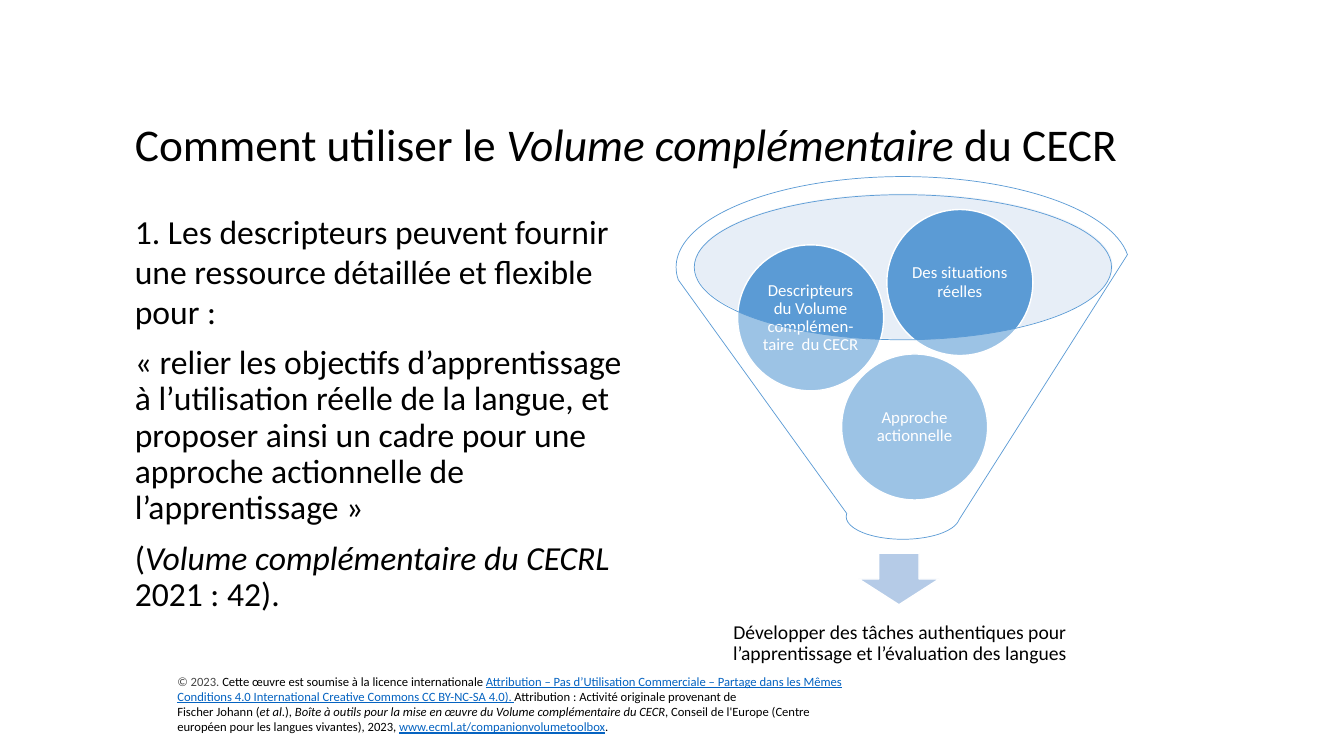
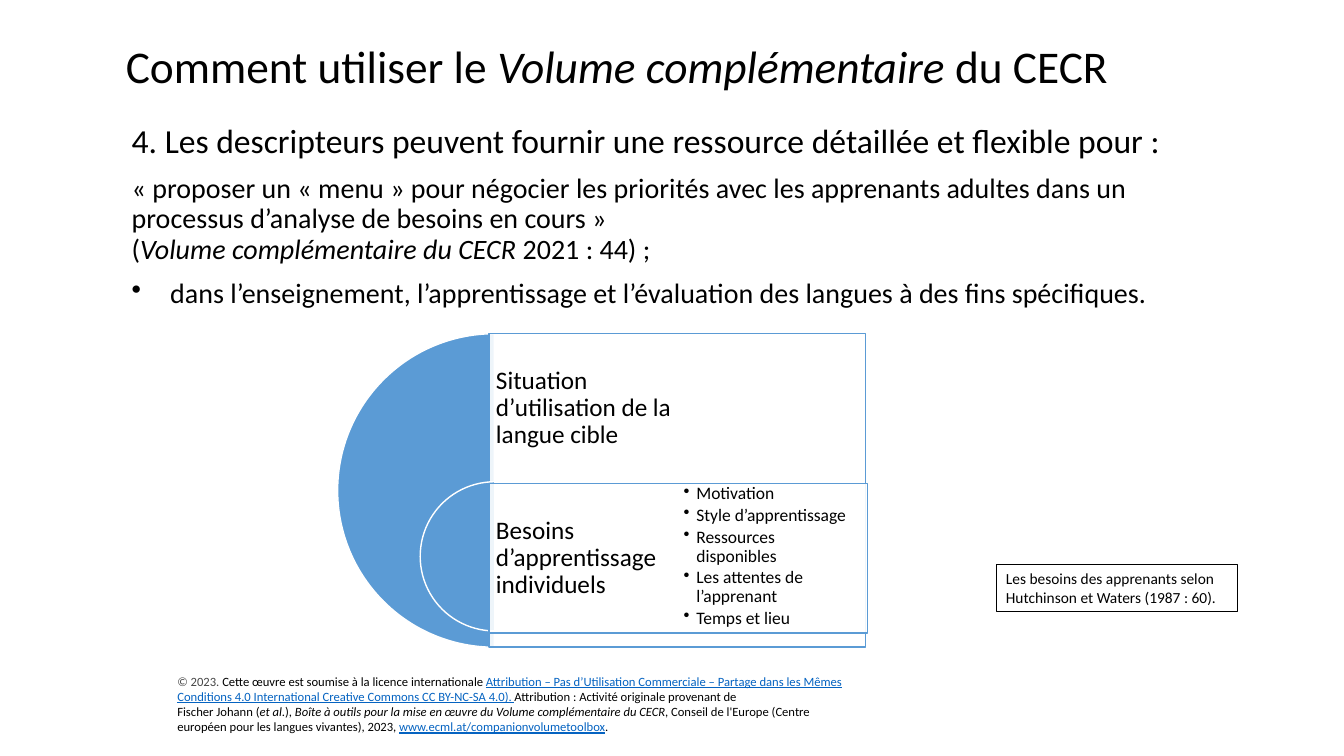
from lxml.etree import SubElement
from pptx import Presentation
from pptx.dml.color import RGBColor
from pptx.enum.shapes import MSO_SHAPE as Shape
from pptx.enum.text import MSO_ANCHOR as Anchor, MSO_AUTO_SIZE as AutoSize, PP_ALIGN as Align
from pptx.oxml.ns import qn
from pptx.util import Cm, Pt

BLACK = RGBColor(0x00, 0x00, 0x00)
WHITE = RGBColor(0xFF, 0xFF, 0xFF)
GREY = RGBColor(0x46, 0x46, 0x46)
BLUE = RGBColor(0x5B, 0x9B, 0xD5)
PALE_BLUE = RGBColor(0xC4, 0xD5, 0xEB)
ARROW_BLUE = RGBColor(0xB5, 0xCB, 0xE7)
LINK_BLUE = RGBColor(0x05, 0x63, 0xC1)

ITALIC = {"italic": True}
LINK = {"underline": True, "color": LINK_BLUE}
BREAK = "\n"

TITLE = ["Comment utiliser le ", ("Volume complémentaire ", ITALIC), "du CECR"]
LICENCE = [
    [
        ("© 2023. ", {"color": GREY}),
        "Cette œuvre est soumise à la licence internationale ",
        ("Attribution – Pas d’Utilisation Commerciale – Partage dans les Mêmes "
         "Conditions 4.0 International Creative Commons CC BY-NC-SA 4.0). ", LINK),
        "Attribution : Activité originale provenant de",
    ],
    [
        "Fischer Johann (",
        ("et al.", ITALIC),
        "), ",
        ("Boîte à outils pour la mise en œuvre du Volume complémentaire du CECR", ITALIC),
        ", Conseil de l'Europe (Centre européen pour les langues vivantes), 2023, ",
        ("www.ecml.at/companionvolumetoolbox", LINK),
        ".",
    ],
]


class SlideBuilder:
    """Holds the shared style and the current slide."""

    font = "Calibri"
    tight = 0.9

    def __init__(self):
        self.deck = Presentation()
        self.deck.slide_width, self.deck.slide_height = Cm(33.87), Cm(19.05)
        self.page = None

    def new_page(self, left, top, width, height):
        """Start a slide with the common title and licence footer."""
        self.page = self.deck.slides.add_slide(self.deck.slide_layouts[5])
        title = self.page.shapes.title
        title.left, title.top, title.width, title.height = map(Cm, (left, top, width, height))
        self.frame(title, Anchor.BOTTOM, 0.25, 0.13)
        self.fill_paragraph(title.text_frame.paragraphs[0], TITLE, 32.4)
        footer = self.text_box(4.22, 16.84, 17.4, 1.8, Anchor.MIDDLE)
        for line in LICENCE:
            self.paragraph(footer, line, 9, spacing=1)

    def frame(self, shape, anchor, side, end):
        frame = shape.text_frame
        frame.word_wrap = True
        frame.auto_size = AutoSize.NONE
        frame.vertical_anchor = anchor
        frame.margin_left = frame.margin_right = Cm(side)
        frame.margin_top = frame.margin_bottom = Cm(end)
        return frame

    def text_box(self, left, top, width, height, anchor=Anchor.TOP, side=0.25, end=0.13):
        box = self.page.shapes.add_textbox(*map(Cm, (left, top, width, height)))
        return self.frame(box, anchor, side, end)

    def paragraph(self, frame, spans, size, before=0, bullet=0, **style):
        """Fill the empty first paragraph, or add one below the others."""
        para = frame.paragraphs[0]
        if para.runs:
            para = frame.add_paragraph()
            para.space_before = Pt(before)
        if bullet:
            properties = para._p.get_or_add_pPr()
            properties.set("marL", str(Cm(bullet)))
            properties.set("indent", str(-Cm(bullet)))
            SubElement(properties, qn("a:buChar")).set("char", "•")
        self.fill_paragraph(para, spans, size, **style)

    def fill_paragraph(self, para, spans, size, color=BLACK, align=Align.LEFT, spacing=tight):
        para.alignment = align
        para.line_spacing = spacing
        for span in spans:
            if span == BREAK:
                para.add_line_break()
                continue
            text, look = (span, {}) if isinstance(span, str) else span
            run = para.add_run()
            run.text = text
            run.font.name = self.font
            run.font.size = Pt(size)
            run.font.italic = look.get("italic", False)
            run.font.underline = look.get("underline", False)
            run.font.color.rgb = look.get("color", color)

    def shape(self, kind, left, top, width, height, fill=None, line=None, weight=1, opacity=100):
        shape = self.page.shapes.add_shape(kind, *map(Cm, (left, top, width, height)))
        shape.shadow.inherit = False
        if fill is None:
            shape.fill.background()
        else:
            shape.fill.solid()
            shape.fill.fore_color.rgb = fill
            if opacity < 100:
                color = shape._element.spPr.find(qn("a:solidFill"))[0]
                SubElement(color, qn("a:alpha")).set("val", str(opacity * 1000))
        if line is None:
            shape.line.fill.background()
        else:
            shape.line.color.rgb = line
            shape.line.width = Pt(weight)
        return shape

    def ball(self, left, top, text):
        ball = self.shape(Shape.OVAL, left, top, 3.68, 3.68, BLUE, WHITE)
        frame = self.frame(ball, Anchor.MIDDLE, 0.05, 0.05)
        self.paragraph(frame, [text], 12, color=WHITE, align=Align.CENTER)

    def half_disc(self, left, top, diameter):
        disc = self.shape(Shape.PIE, left, top, diameter, diameter, BLUE, WHITE)
        # Angles of 90 and 270 degrees, in units of 100000
        disc.adjustments[0], disc.adjustments[1] = 54, 162

    def panel(self, left, top, width, height, label):
        """White panel with a label in its upper left part."""
        self.shape(Shape.RECTANGLE, left, top, width, height, WHITE, BLUE, opacity=90)
        frame = self.text_box(left, top, 4.78, 3.76, Anchor.MIDDLE, 0.18, 0.18)
        self.paragraph(frame, [label], 18)


def funnel_page(builder):
    builder.new_page(3.15, 1.8, 27.03, 2.64)

    # Funnel with its three ingredients
    builder.shape(Shape.OVAL, 17.5, 4.88, 10.54, 3.66, PALE_BLUE, opacity=40)
    builder.shape(Shape.DOWN_ARROW, 21.64, 13.94, 2.03, 1.3, ARROW_BLUE, WHITE)
    for left, top, text in (
        (21.21, 8.92, "Approche actionnelle"),
        (18.59, 6.17, "Descripteurs du Volume complémen-taire  du CECR"),
        (22.35, 5.28, "Des situations réelles"),
    ):
        builder.ball(left, top, text)
    builder.shape(Shape.FUNNEL, 17.04, 4.45, 11.43, 9.14, WHITE, BLUE, 0.5, 40)

    # Outcome below the arrow
    outcome = builder.text_box(17.78, 14.99, 9.8, 2.44, Anchor.MIDDLE, 0.28, 0.28)
    builder.paragraph(
        outcome,
        ["Développer des tâches authentiques pour l’apprentissage et l’évaluation des langues"],
        14, align=Align.CENTER)

    # Quotation
    body = builder.text_box(3.15, 5.18, 13.03, 10.11)
    builder.paragraph(
        body,
        ["1. Les descripteurs peuvent fournir une ressource détaillée et flexible pour :"],
        24, spacing=1)
    builder.paragraph(
        body,
        ["« relier les objectifs d’apprentissage à l’utilisation réelle de la langue, et "
         "proposer ainsi un cadre pour une approche actionnelle de l’apprentissage »"],
        24, before=10)
    builder.paragraph(
        body,
        ["(", ("Volume complémentaire du CECRL ", ITALIC), "2021 : 42)."],
        24, before=10)


def needs_page(builder):
    builder.new_page(2.92, 0.71, 26.72, 1.78)

    # Quotation
    body = builder.text_box(3.07, 3, 27, 5.2)
    builder.paragraph(
        body,
        ["4. Les descripteurs peuvent fournir une ressource détaillée et flexible pour :"], 24)
    builder.paragraph(
        body,
        ["« proposer un « menu » pour négocier les priorités avec les apprenants adultes dans un "
         "processus d’analyse de besoins en cours » ",
         BREAK, "(", ("Volume complémentaire du CECR ", ITALIC), "2021 : 44) ;"],
        20, before=10)
    builder.paragraph(
        body,
        ["dans l’enseignement, l’apprentissage et l’évaluation des langues à des fins spécifiques."],
        20, before=10, bullet=0.97)

    # Nested half discs, each with its panel
    builder.half_disc(8.51, 8.41, 7.9)
    builder.panel(12.32, 8.41, 9.5, 7.9, "Situation d’utilisation de la langue cible")
    builder.half_disc(10.59, 12.14, 3.76)
    builder.panel(12.32, 12.19, 9.55, 3.76, "Besoins d’apprentissage individuels")
    needs = builder.text_box(16.54, 12.14, 5.69, 3.76, Anchor.MIDDLE, 0.69, 0)
    for need in ("Motivation", "Style d’apprentissage", "Ressources disponibles",
                 "Les attentes de l’apprenant", "Temps et lieu"):
        builder.paragraph(needs, [need], 12.5, before=2, bullet=0.32)

    # Source note
    note = builder.shape(Shape.RECTANGLE, 25.1, 14.22, 6.07, 1.19, line=BLACK, weight=0.25)
    frame = builder.frame(note, Anchor.TOP, 0.25, 0.13)
    builder.paragraph(
        frame,
        ["Les besoins des apprenants selon", BREAK, "Hutchinson et Waters (1987 : 60)."],
        11, spacing=1)


def main():
    builder = SlideBuilder()
    funnel_page(builder)
    needs_page(builder)
    builder.deck.save("out.pptx")


if __name__ == "__main__":
    main()
